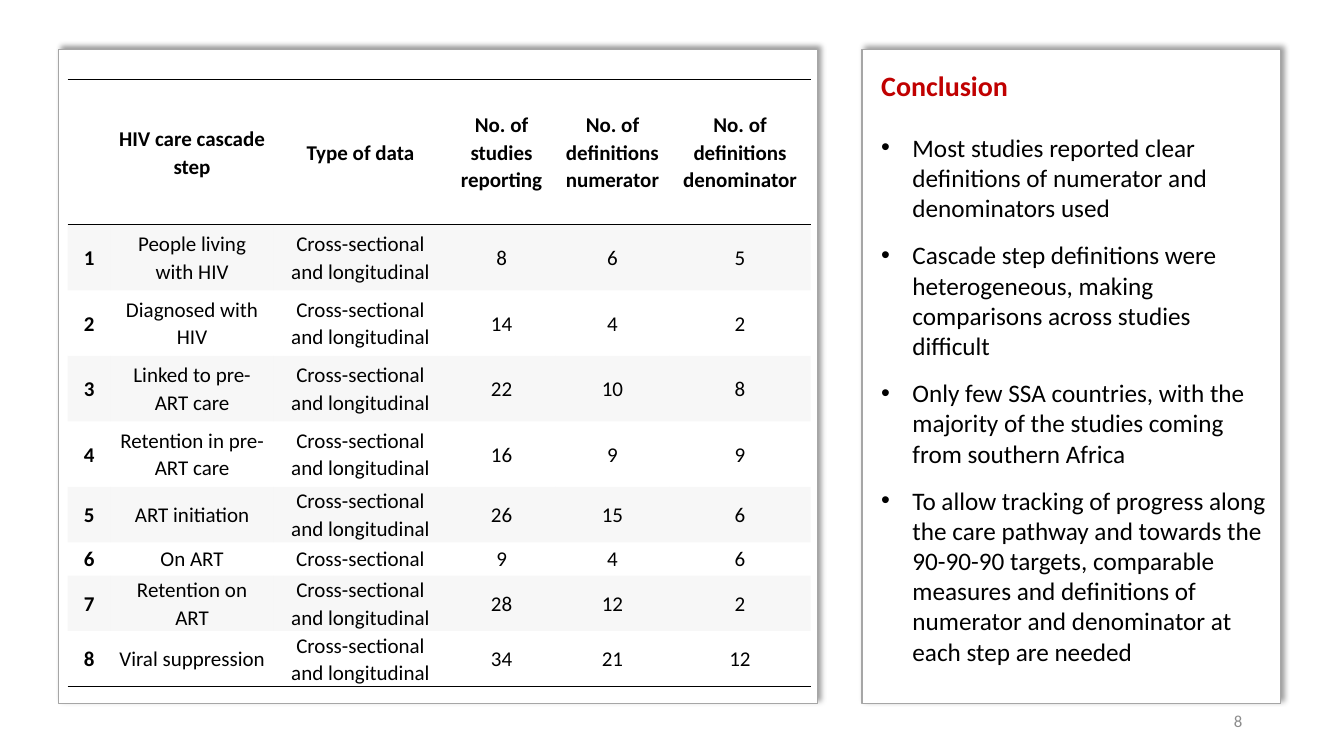
from dataclasses import astuple, dataclass

from lxml.etree import SubElement
from pptx import Presentation
from pptx.dml.color import RGBColor
from pptx.enum.text import MSO_ANCHOR, MSO_AUTO_SIZE, PP_ALIGN
from pptx.enum.shapes import MSO_SHAPE
from pptx.oxml import parse_xml
from pptx.oxml.ns import nsdecls, qn
from pptx.shapes.autoshape import Shape
from pptx.slide import Slide
from pptx.table import Table, _Cell
from pptx.text.text import TextFrame, _Paragraph
from pptx.util import Inches, Pt

FONT = "Calibri"
BLACK, WHITE, RED = "000000", "FFFFFF", "C00000"
PANEL_LINE, BAND, NUMBER_GREY = "A6A6A6", "D9D9D9", "8C8C8C"
NO_STYLE_NO_GRID = "{2D5ABB26-0587-4C30-8999-92F81FD0307C}"
PANEL_TOP, PANEL_HEIGHT = 0.49, 6.49


@dataclass
class Box:
    left: float
    top: float
    width: float
    height: float


@dataclass
class CascadeStep:
    number: str
    name: str
    data_type: str
    studies: str
    numerators: str
    denominators: str


TABLE_PANEL = Box(0.58, PANEL_TOP, 7.53, PANEL_HEIGHT)
CONCLUSION_PANEL = Box(8.55, PANEL_TOP, 4.15, PANEL_HEIGHT)
TITLE_BOX = Box(8.74, 0.68, 3.86, 0.4)
TABLE_BOX = Box(0.67, 0.79, 7.37, 6.02)
NUMBER_BOX = Box(9.42, 6.95, 3, 0.4)

COLUMN_WIDTHS = [0.43, 1.61, 1.73, 1.07, 1.13, 1.4]
ROW_HEIGHTS = [1.44] + [0.65] * 4 + [0.55, 0.33, 0.55, 0.55]
BOTH = "Cross-sectional and longitudinal"
STEPS = [
    CascadeStep("", "HIV care cascade step", "Type of data", "No. of studies reporting",
                "No. of definitions numerator", "No. of definitions denominator"),
    CascadeStep("1", "People living with HIV", BOTH, "8", "6", "5"),
    CascadeStep("2", "Diagnosed with HIV", BOTH, "14", "4", "2"),
    CascadeStep("3", "Linked to pre-ART care", BOTH, "22", "10", "8"),
    CascadeStep("4", "Retention in pre-ART care", BOTH, "16", "9", "9"),
    CascadeStep("5", "ART initiation", BOTH, "26", "15", "6"),
    CascadeStep("6", "On ART", "Cross-sectional", "9", "4", "6"),
    CascadeStep("7", "Retention on ART", BOTH, "28", "12", "2"),
    CascadeStep("8", "Viral suppression", BOTH, "34", "21", "12"),
]
CONCLUSIONS = [
    "Most studies reported clear definitions of numerator and denominators used",
    "Cascade step definitions were heterogeneous, making comparisons across studies difficult",
    "Only few SSA countries, with the majority of the studies coming from southern Africa",
    "To allow tracking of progress along the care pathway and towards the 90-90-90 targets, "
    "comparable measures and definitions of numerator and denominator at each step are needed",
]


def color(value: str) -> RGBColor:
    return RGBColor.from_string(value)


def inches(box: Box) -> list[int]:
    return [Inches(length) for length in astuple(box)]


def place(shape: Shape, box: Box) -> None:
    shape.left, shape.top, shape.width, shape.height = inches(box)


def add_run(paragraph: _Paragraph, text: str, size: float,
            hex_color: str = BLACK, bold: bool = False) -> None:
    run = paragraph.add_run()
    run.text = text
    run.font.name = FONT
    run.font.size = Pt(size)
    run.font.bold = bold
    run.font.color.rgb = color(hex_color)


def set_frame(frame: TextFrame, anchor: MSO_ANCHOR, left: float = 0,
              top: float = 0, right: float = 0, bottom: float = 0) -> None:
    frame.word_wrap = True
    frame.auto_size = MSO_AUTO_SIZE.NONE
    frame.vertical_anchor = anchor
    frame.margin_left, frame.margin_top = Inches(left), Inches(top)
    frame.margin_right, frame.margin_bottom = Inches(right), Inches(bottom)


def style_panel(shape: Shape) -> None:
    """White panel with a grey outline and a soft shadow to the upper right."""
    shape.fill.solid()
    shape.fill.fore_color.rgb = color(WHITE)
    shape.line.color.rgb = color(PANEL_LINE)
    shape.line.width = Pt(1)
    shape.shadow.inherit = False
    effects = shape.element.spPr.find(qn("a:effectLst"))
    effects.append(parse_xml(
        f'<a:outerShdw {nsdecls("a")} blurRad="{Pt(4)}" dist="{Pt(3)}" dir="{315 * 60000}" '
        f'algn="bl" rotWithShape="0"><a:srgbClr val="{BLACK}"><a:alpha val="40000"/>'
        '</a:srgbClr></a:outerShdw>'))


def add_conclusion(slide: Slide) -> None:
    body = slide.placeholders[1]
    place(body, CONCLUSION_PANEL)
    style_panel(body)
    set_frame(body.text_frame, MSO_ANCHOR.TOP, 0.19, 0.82, 0.1, 0.05)
    for index, conclusion in enumerate(CONCLUSIONS):
        paragraph = body.text_frame.paragraphs[0] if index == 0 else body.text_frame.add_paragraph()
        paragraph.space_before, paragraph.space_after = Pt(0), Pt(12)
        properties = paragraph._p.get_or_add_pPr()
        properties.set("marL", str(Inches(0.31)))
        properties.set("indent", str(Inches(-0.31)))
        add_run(paragraph, conclusion, 18)

    title = slide.shapes.title
    place(title, TITLE_BOX)
    set_frame(title.text_frame, MSO_ANCHOR.TOP)
    heading = title.text_frame.paragraphs[0]
    heading.alignment = PP_ALIGN.LEFT
    add_run(heading, "Conclusion", 20, RED, bold=True)
    body.element.addnext(title.element)  # keeps the heading in front of the panel


def add_border(cell: _Cell, side: str, position: int) -> None:
    cell._tc.get_or_add_tcPr().insert(position, parse_xml(
        f'<a:{side} {nsdecls("a")} w="{Pt(1)}"><a:solidFill><a:srgbClr val="{BLACK}"/>'
        f'</a:solidFill></a:{side}>'))


def fill_cell(cell: _Cell, text: str, row: int, column: int) -> None:
    cell.vertical_anchor = MSO_ANCHOR.MIDDLE
    cell.margin_left = cell.margin_right = Inches(0.07)
    cell.margin_top = cell.margin_bottom = 0
    if row % 2:
        cell.fill.solid()
        cell.fill.fore_color.rgb = color(BAND)
        band_color = cell._tc.tcPr.find(".//" + qn("a:srgbClr"))
        SubElement(band_color, qn("a:alpha")).set("val", "20000")
    else:
        cell.fill.background()
    if row in (0, len(STEPS) - 1):
        add_border(cell, "lnB", 0)
    if row == 0:
        add_border(cell, "lnT", 0)
    if text:
        paragraph = cell.text_frame.paragraphs[0]
        paragraph.alignment = PP_ALIGN.CENTER
        paragraph.line_spacing = 1.07
        add_run(paragraph, text, 15, bold=row == 0 or column == 0)


def add_cascade_table(slide: Slide) -> Table:
    table = slide.shapes.add_table(len(STEPS), len(COLUMN_WIDTHS), *inches(TABLE_BOX)).table
    table.first_row = table.horz_banding = False
    table._tbl.tblPr.find(qn("a:tableStyleId")).text = NO_STYLE_NO_GRID
    for column, width in zip(table.columns, COLUMN_WIDTHS):
        column.width = Inches(width)
    for row, height in zip(table.rows, ROW_HEIGHTS):
        row.height = Inches(height)
    for row_index, step in enumerate(STEPS):
        for column_index, text in enumerate(astuple(step)):
            fill_cell(table.cell(row_index, column_index), text, row_index, column_index)
    return table


def add_slide_number(slide: Slide, number: str) -> None:
    text_box = slide.shapes.add_textbox(*inches(NUMBER_BOX))
    set_frame(text_box.text_frame, MSO_ANCHOR.MIDDLE, 0.1, 0.05, 0.1, 0.05)
    paragraph = text_box.text_frame.paragraphs[0]
    paragraph.alignment = PP_ALIGN.RIGHT
    add_run(paragraph, number, 12, NUMBER_GREY)


def main() -> None:
    presentation = Presentation()
    presentation.slide_width, presentation.slide_height = Inches(13.33), Inches(7.5)
    slide = presentation.slides.add_slide(presentation.slide_layouts[1])
    add_conclusion(slide)
    add_slide_number(slide, "8")
    style_panel(slide.shapes.add_shape(MSO_SHAPE.RECTANGLE, *inches(TABLE_PANEL)))
    add_cascade_table(slide)
    presentation.save("out.pptx")


if __name__ == "__main__":
    main()
